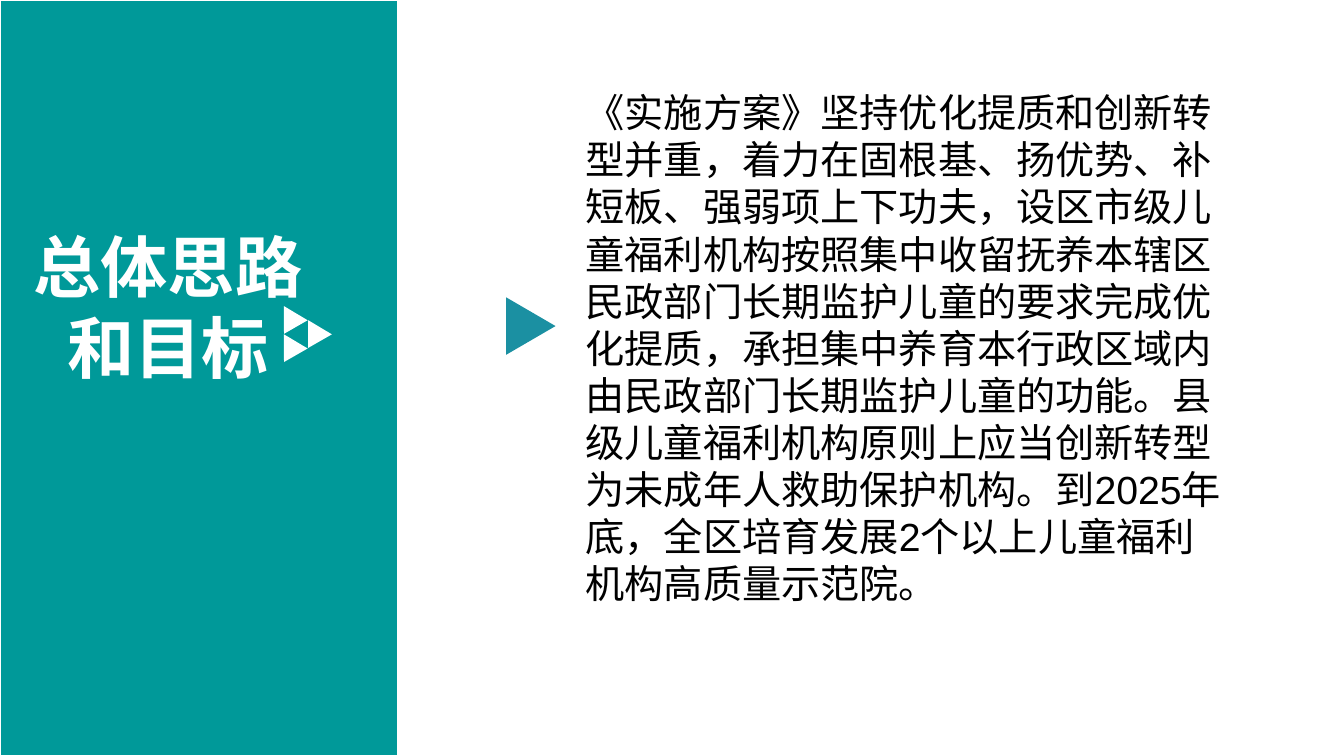
from dataclasses import dataclass

import pptx
import pptx.dml.color
import pptx.enum.shapes
import pptx.enum.text
import pptx.oxml.ns
import pptx.util
from lxml import etree

EMU_PER_PX = 9144
WHITE = pptx.dml.color.RGBColor(0xFF, 0xFF, 0xFF)
BLACK = pptx.dml.color.RGBColor(0x00, 0x00, 0x00)
TEAL = pptx.dml.color.RGBColor(0x00, 0x99, 0x99)
BLUE = pptx.dml.color.RGBColor(0x1B, 0x90, 0xA2)

TITLE = "总体思路和目标"
BODY = (
    "《实施方案》坚持优化提质和创新转型并重，着力在固根基、扬优势、补短板、强弱项上下功夫，"
    "设区市级儿童福利机构按照集中收留抚养本辖区民政部门长期监护儿童的要求完成优化提质，"
    "承担集中养育本行政区域内由民政部门长期监护儿童的功能。"
    "县级儿童福利机构原则上应当创新转型为未成年人救助保护机构。"
    "到2025年底，全区培育发展2个以上儿童福利机构高质量示范院。"
)


@dataclass(frozen=True)
class Box:
    left: int
    top: int
    width: int
    height: int

    def emu(self) -> tuple[int, ...]:
        return tuple(px(value) for value in (self.left, self.top, self.width, self.height))


@dataclass(frozen=True)
class Triangle:
    box: Box
    rotation: float
    color: pptx.dml.color.RGBColor


TRIANGLES = (
    Triangle(Box(274, 302, 27, 24), 330.2, WHITE),
    Triangle(Box(274, 330, 27, 24), 330.2, WHITE),
    Triangle(Box(298, 316, 27, 24), 330.2, WHITE),
    Triangle(Box(498, 299, 57, 49), 90, BLUE),
)


def px(value: int) -> int:
    return value * EMU_PER_PX


def add_filled_shape(slide, kind, box: Box, color):
    shape = slide.shapes.add_shape(kind, *box.emu())
    shape.shadow.inherit = False
    shape.fill.solid()
    shape.fill.fore_color.rgb = color
    shape.line.fill.background()
    return shape


def add_triangle(slide, triangle: Triangle) -> None:
    kind = pptx.enum.shapes.MSO_SHAPE.ISOSCELES_TRIANGLE
    shape = add_filled_shape(slide, kind, triangle.box, triangle.color)
    shape.rotation = triangle.rotation


def write_text(shape, text: str, *, size: int, font: str, color, bold: bool = False,
               alignment=pptx.enum.text.PP_ALIGN.LEFT) -> None:
    frame = shape.text_frame
    frame.word_wrap = True
    frame.auto_size = pptx.enum.text.MSO_AUTO_SIZE.NONE
    frame.vertical_anchor = pptx.enum.text.MSO_ANCHOR.TOP
    paragraph = frame.paragraphs[0]
    paragraph.alignment = alignment
    run = paragraph.add_run()
    run.text = text
    run.font.size = pptx.util.Pt(size)
    run.font.name = font
    run.font.bold = bold
    run.font.color.rgb = color
    east_asian = etree.SubElement(run.font._element, pptx.oxml.ns.qn("a:ea"))
    east_asian.set("typeface", font)


def add_panel(slide) -> None:
    kind = pptx.enum.shapes.MSO_SHAPE.RECTANGLE
    panel = add_filled_shape(slide, kind, Box(0, 0, 395, 750), TEAL)
    panel.line.color.rgb = WHITE
    panel.line.width = pptx.util.Pt(1.5)
    slide.shapes.title._element.addprevious(panel._element)


def format_title(slide) -> None:
    title = slide.shapes.title
    title.left, title.top, title.width, title.height = Box(0, 219, 333, 172).emu()
    write_text(title, TITLE, size=48, font="Noto Sans CJK SC", color=WHITE, bold=True,
               alignment=pptx.enum.text.PP_ALIGN.CENTER)


def main() -> None:
    presentation = pptx.Presentation()
    presentation.slide_width = px(1333)
    presentation.slide_height = px(750)
    slide = presentation.slides.add_slide(presentation.slide_layouts[5])
    add_panel(slide)
    format_title(slide)
    for triangle in TRIANGLES:
        add_triangle(slide, triangle)
    body = slide.shapes.add_textbox(*Box(571, 83, 662, 528).emu())
    write_text(body, BODY, size=28, font="Arial", color=BLACK)
    presentation.save("out.pptx")


if __name__ == "__main__":
    main()
